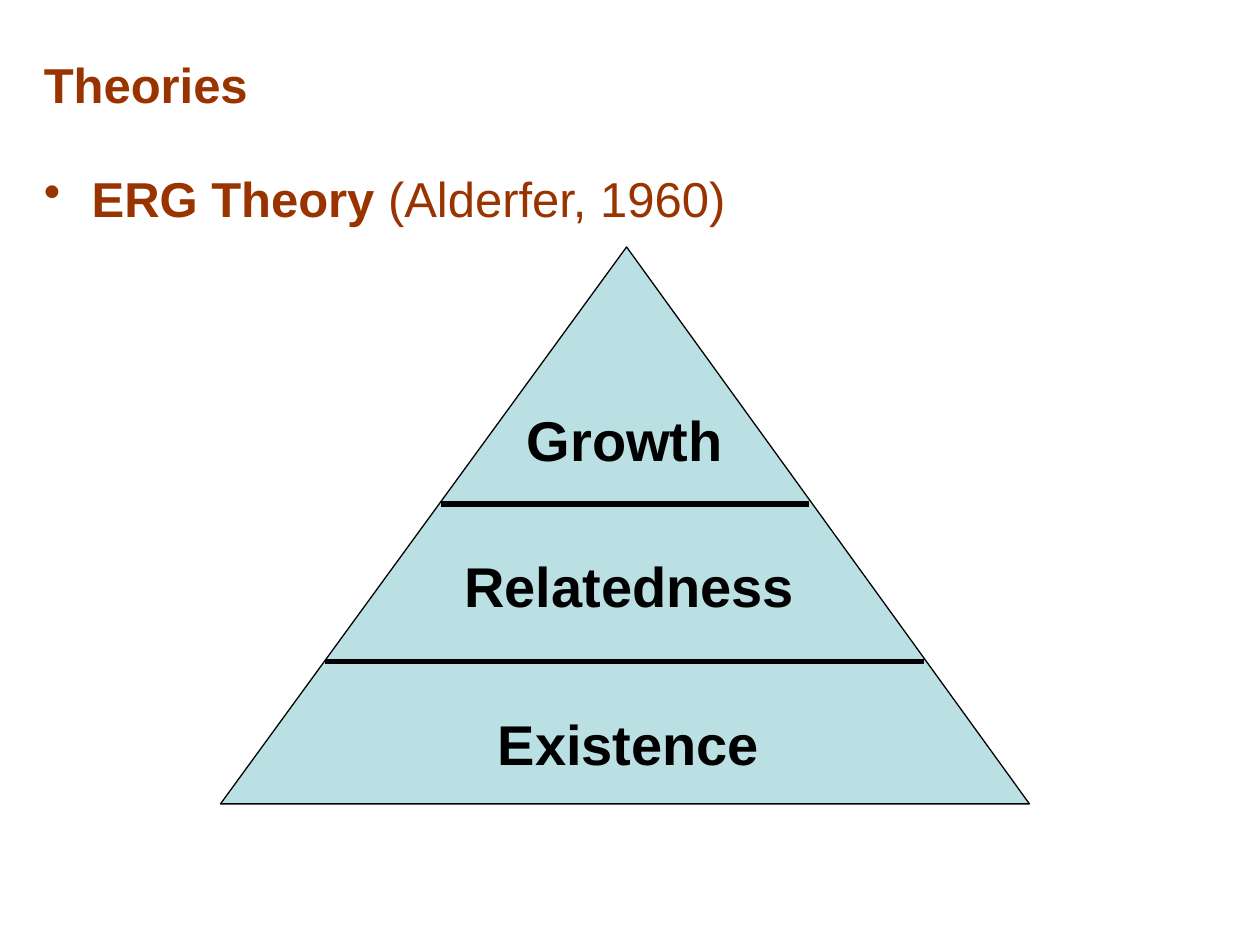
from dataclasses import dataclass

import pptx
import pptx.dml.color
import pptx.enum.shapes
import pptx.enum.text
import pptx.oxml
import pptx.oxml.ns
import pptx.util

Inches = pptx.util.Inches
Anchor = pptx.enum.text.MSO_ANCHOR
Align = pptx.enum.text.PP_ALIGN


@dataclass(frozen=True)
class Theme:
    font: str = "Arial"
    heading: str = "993300"
    ink: str = "000000"
    pyramid: str = "BBE0E3"
    heading_size: int = 28
    level_size: int = 32
    outline: float = 0.75
    divider: float = 3


@dataclass(frozen=True)
class Frame:
    left: float
    top: float
    width: float
    height: float

    def lengths(self) -> list:
        return [Inches(n) for n in (self.left, self.top, self.width, self.height)]


@dataclass(frozen=True)
class Level:
    text: str
    frame: Frame


@dataclass(frozen=True)
class Divider:
    left: float
    right: float
    y: float


THEME = Theme()
PYRAMID = Frame(1.75, 1.96, 6.42, 4.42)
APEX = 0.502
LEVELS = [
    Level("Existence", Frame(3.24, 5.58, 3.5, 0.64)),
    Level("Relatedness", Frame(3.33, 4.33, 3.33, 0.64)),
    Level("Growth", Frame(4, 3.17, 1.92, 0.64)),
]
DIVIDERS = [Divider(2.58, 7.33, 5.25), Divider(3.5, 6.42, 4)]


def color(code: str) -> pptx.dml.color.RGBColor:
    return pptx.dml.color.RGBColor.from_string(code)


def add_text_box(page, frame: Frame, anchor=Anchor.TOP, top_inset: float = 0.05):
    """Add a wrapping text box and return its first paragraph."""
    box = page.shapes.add_textbox(*frame.lengths())
    box.text_frame.word_wrap = True
    box.text_frame.vertical_anchor = anchor
    box.text_frame.margin_top = Inches(top_inset)
    return box.text_frame.paragraphs[0]


def add_span(para, text: str, size: int, code: str, bold: bool = True) -> None:
    span = para.add_run()
    span.text = text
    span.font.name = THEME.font
    span.font.size = pptx.util.Pt(size)
    span.font.bold = bold
    span.font.color.rgb = color(code)


def add_bullet(para, indent: float) -> None:
    properties = para._p.get_or_add_pPr()
    properties.set("marL", str(Inches(indent)))
    properties.set("indent", str(-Inches(indent)))
    bullet = pptx.oxml.parse_xml(
        f'<a:buChar {pptx.oxml.ns.nsdecls("a")} char="•"/>')
    properties.append(bullet)


def add_headings(page) -> None:
    title = add_text_box(page, Frame(0.25, 0.33, 9.17, 0.67), Anchor.MIDDLE)
    add_span(title, "Theories", THEME.heading_size, THEME.heading)

    theory = add_text_box(page, Frame(0.25, 1.25, 9.5, 4.62), top_inset=0.09)
    add_bullet(theory, 0.38)
    add_span(theory, "ERG Theory ", THEME.heading_size, THEME.heading)
    add_span(theory, "(Alderfer, 1960)", THEME.heading_size, THEME.heading, bold=False)


def add_pyramid(page) -> None:
    pyramid = page.shapes.add_shape(
        pptx.enum.shapes.MSO_SHAPE.ISOSCELES_TRIANGLE, *PYRAMID.lengths())
    pyramid.adjustments[0] = APEX
    pyramid.shadow.inherit = False
    pyramid.fill.solid()
    pyramid.fill.fore_color.rgb = color(THEME.pyramid)
    pyramid.line.color.rgb = color(THEME.ink)
    pyramid.line.width = pptx.util.Pt(THEME.outline)


def add_divider(page, divider: Divider) -> None:
    line = page.shapes.add_connector(
        pptx.enum.shapes.MSO_CONNECTOR.STRAIGHT,
        Inches(divider.left), Inches(divider.y),
        Inches(divider.right), Inches(divider.y))
    line.line.color.rgb = color(THEME.ink)
    line.line.width = pptx.util.Pt(THEME.divider)
    line._element.spPr.append(
        pptx.oxml.parse_xml(f'<a:effectLst {pptx.oxml.ns.nsdecls("a")}/>'))


def add_level(page, level: Level) -> None:
    para = add_text_box(page, level.frame)
    para.alignment = Align.CENTER
    add_span(para, level.text, THEME.level_size, THEME.ink)


def main() -> None:
    deck = pptx.Presentation()
    deck.slide_width, deck.slide_height = Inches(10), Inches(7.5)
    page = deck.slides.add_slide(deck.slide_layouts[6])
    add_headings(page)
    add_pyramid(page)
    for divider in DIVIDERS:
        add_divider(page, divider)
    for level in LEVELS:
        add_level(page, level)
    deck.save("out.pptx")


if __name__ == "__main__":
    main()
